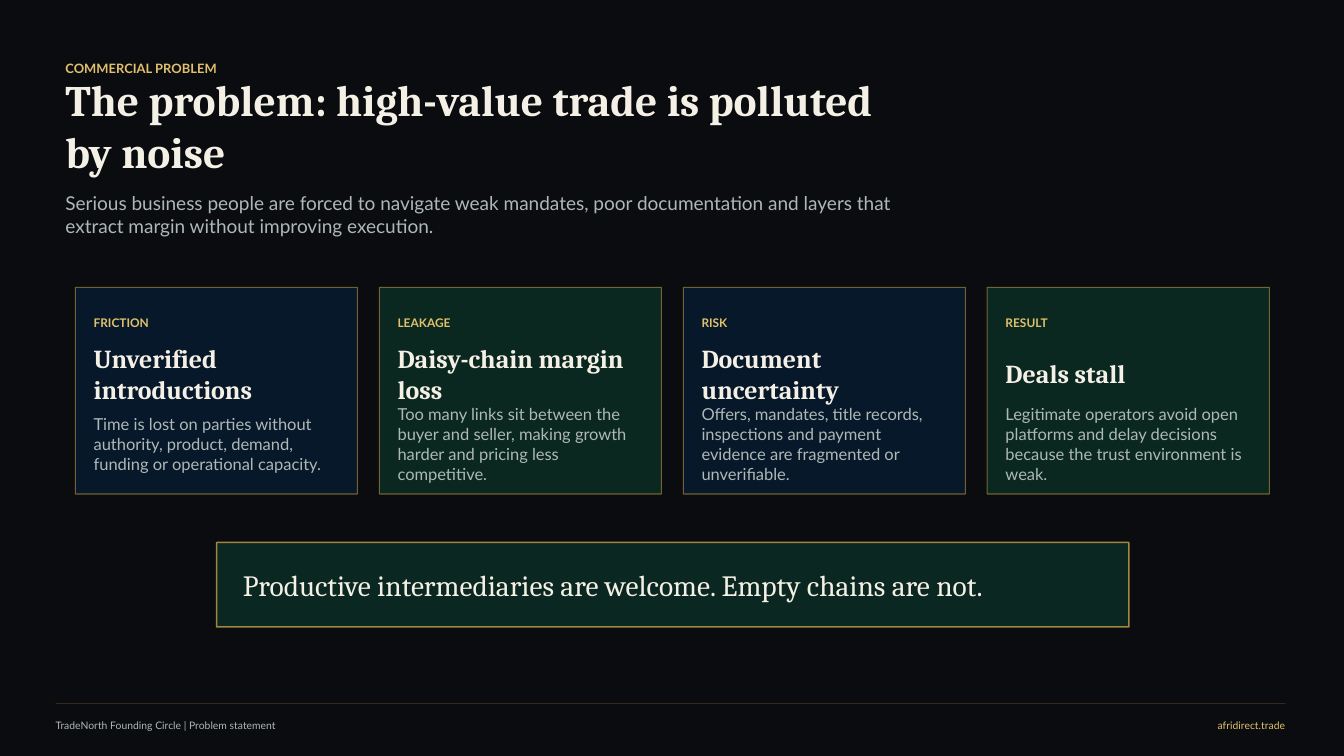
import pptx
import pptx.dml.color
import pptx.enum.shapes
import pptx.enum.text
import pptx.oxml.ns
import pptx.util
from lxml import etree

Cm = pptx.util.Cm
RGBColor = pptx.dml.color.RGBColor
ANCHOR = pptx.enum.text.MSO_ANCHOR
ALIGN = pptx.enum.text.PP_ALIGN

BLACK = RGBColor(0x0A, 0x0C, 0x0F)
NAVY = RGBColor(0x07, 0x1A, 0x2D)
GREEN = RGBColor(0x0B, 0x2A, 0x22)
GOLD = RGBColor(0xC9, 0xA1, 0x4A)
LIGHT_GOLD = RGBColor(0xE2, 0xC1, 0x6D)
IVORY = RGBColor(0xF5, 0xF0, 0xE6)
GREY = RGBColor(0xAE, 0xB8, 0xB5)

EYEBROW = {"name": "Lato", "size": 9.2, "bold": True, "color": LIGHT_GOLD}
TITLE = {"name": "Cambria", "size": 31, "bold": True, "color": IVORY}
SUBTITLE = {"name": "Lato", "size": 13.6, "bold": False, "color": GREY}
CARD_LABEL = {**EYEBROW, "size": 8.5}
CARD_HEADING = {**TITLE, "size": 18.5}
CARD_BODY = {**SUBTITLE, "size": 11.8}
CALLOUT = {**TITLE, "size": 21, "bold": False}
FOOTER = {**SUBTITLE, "size": 7.4}
FOOTER_ADDRESS = {**FOOTER, "color": LIGHT_GOLD}

MARGIN, HEADER_WIDTH = 1.65, 21.34
CARD_LEFT, CARD_TOP, CARD_WIDTH, CARD_HEIGHT = 1.9, 7.24, 7.11, 5.21
CARD_PITCH, CARD_PADDING = 7.66, 0.46
FOOTER_LEFT, FOOTER_RIGHT, FOOTER_TOP = 1.4, 32.39, 18.08

CARDS = [
    ("FRICTION", "Unverified introductions",
     "Time is lost on parties without authority, product, demand, "
     "funding or operational capacity."),
    ("LEAKAGE", "Daisy-chain margin loss",
     "Too many links sit between the buyer and seller, making growth "
     "harder and pricing less competitive."),
    ("RISK", "Document uncertainty",
     "Offers, mandates, title records, inspections and payment "
     "evidence are fragmented or unverifiable."),
    ("RESULT", "Deals stall",
     "Legitimate operators avoid open platforms and delay decisions "
     "because the trust environment is weak."),
]


def write_text(shape, text, text_format, anchor=ANCHOR.MIDDLE, align=ALIGN.LEFT):
    frame = shape.text_frame
    frame_format = {
        "word_wrap": True, "vertical_anchor": anchor,
        "auto_size": pptx.enum.text.MSO_AUTO_SIZE.NONE,
        "margin_left": 0, "margin_right": 0, "margin_top": 0, "margin_bottom": 0,
    }
    for name, value in frame_format.items():
        setattr(frame, name, value)
    paragraph = frame.paragraphs[0]
    paragraph.alignment = align
    run = paragraph.add_run()
    run.text = text
    for name, value in text_format.items():
        if name == "color":
            run.font.color.rgb = value
        else:
            setattr(run.font, name, pptx.util.Pt(value) if name == "size" else value)


def add_text(slide, box, text, text_format, **placing):
    shape = slide.shapes.add_textbox(*map(Cm, box))
    write_text(shape, text, text_format, **placing)


def set_opacity(shape_properties, percent):
    """Make the colour inside a solid fill or line partly transparent."""
    color = shape_properties.find(pptx.oxml.ns.qn("a:solidFill"))[0]
    alpha = etree.SubElement(color, pptx.oxml.ns.qn("a:alpha"))
    alpha.set("val", str(percent * 1000))


def format_line(line, width, opacity):
    line.color.rgb = GOLD
    line.width = pptx.util.Pt(width)
    set_opacity(line._get_or_add_ln(), opacity)


def add_panel(slide, box, color, opacity, line_width, line_opacity):
    panel = slide.shapes.add_shape(
        pptx.enum.shapes.MSO_SHAPE.RECTANGLE, *map(Cm, box))
    panel.shadow.inherit = False
    panel.fill.solid()
    panel.fill.fore_color.rgb = color
    set_opacity(panel._element.spPr, opacity)
    format_line(panel.line, line_width, line_opacity)


def add_card(slide, left, color, label, heading, body):
    add_panel(slide, (left, CARD_TOP, CARD_WIDTH, CARD_HEIGHT), color, 92, 0.75, 55)
    rows = [
        (0.46, 0.86, label, CARD_LABEL),
        (1.47, 1.4, heading, CARD_HEADING),
        (3.15, 1.6, body, CARD_BODY),
    ]
    for offset, height, text, text_format in rows:
        box = (left + CARD_PADDING, CARD_TOP + offset,
               CARD_WIDTH - 2 * CARD_PADDING, height)
        add_text(slide, box, text, text_format)


def add_header(slide):
    add_text(slide, (MARGIN, 1.4, HEADER_WIDTH, 0.64), "COMMERCIAL PROBLEM", EYEBROW)
    title = slide.shapes.title
    title_box = {"left": MARGIN, "top": 2.24, "width": HEADER_WIDTH, "height": 1.83}
    for name, value in title_box.items():
        setattr(title, name, Cm(value))
    write_text(title, "The problem: high-value trade is polluted by noise", TITLE)
    add_text(slide, (MARGIN, 4.83, HEADER_WIDTH, 1.32),
             "Serious business people are forced to navigate weak mandates, poor "
             "documentation and layers that extract margin without improving execution.",
             SUBTITLE, anchor=ANCHOR.TOP)


def add_callout(slide):
    add_panel(slide, (5.46, 13.67, 22.99, 2.13), GREEN, 95, 1.1, 80)
    add_text(slide, (6.12, 14.22, 21.67, 1.02),
             "Productive intermediaries are welcome. Empty chains are not.", CALLOUT)


def add_footer(slide):
    add_text(slide, (FOOTER_LEFT, FOOTER_TOP, 14.22, 0.41),
             "TradeNorth Founding Circle | Problem statement", FOOTER)
    address_width = 6.22
    add_text(slide, (FOOTER_RIGHT - address_width, FOOTER_TOP, address_width, 0.41),
             "afridirect.trade", FOOTER_ADDRESS, align=ALIGN.RIGHT)
    rule = slide.shapes.add_connector(
        pptx.enum.shapes.MSO_CONNECTOR.STRAIGHT,
        Cm(FOOTER_LEFT), Cm(17.73), Cm(FOOTER_RIGHT), Cm(17.73))
    format_line(rule.line, 0.5, 32)
    etree.SubElement(rule._element.spPr, pptx.oxml.ns.qn("a:effectLst"))


def main():
    presentation = pptx.Presentation()
    presentation.slide_width = Cm(33.87)
    presentation.slide_height = Cm(19.05)
    title_only = presentation.slide_layouts.get_by_name("Title Only")
    slide = presentation.slides.add_slide(title_only)
    slide.background.fill.solid()
    slide.background.fill.fore_color.rgb = BLACK

    add_header(slide)
    for index, card in enumerate(CARDS):
        color = GREEN if index % 2 else NAVY
        add_card(slide, CARD_LEFT + index * CARD_PITCH, color, *card)
    add_callout(slide)
    add_footer(slide)
    presentation.save("out.pptx")


if __name__ == "__main__":
    main()
